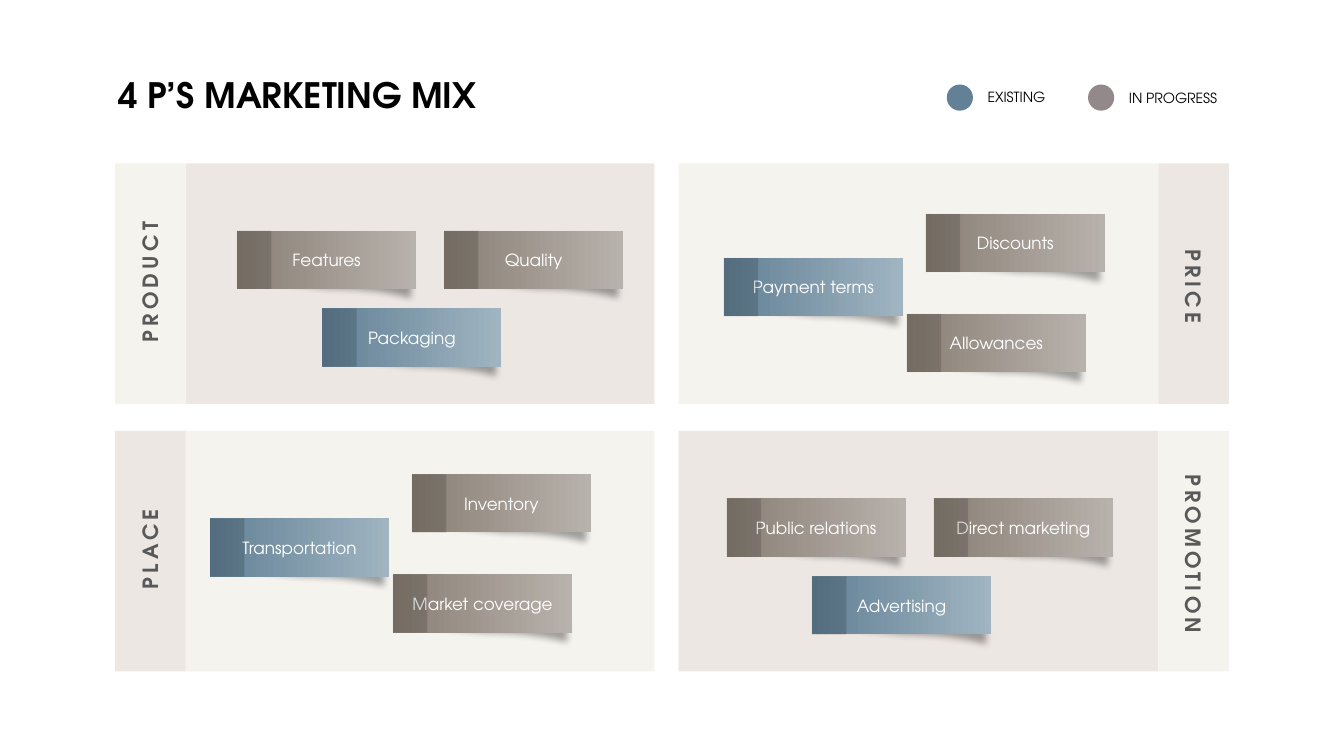
from lxml import etree
from pptx import Presentation
from pptx.dml.color import RGBColor
from pptx.enum.shapes import MSO_SHAPE
from pptx.enum.text import MSO_ANCHOR, MSO_AUTO_SIZE, PP_ALIGN
from pptx.oxml.ns import qn
from pptx.util import Cm, Pt

RECT, OVAL = MSO_SHAPE.RECTANGLE, MSO_SHAPE.OVAL
LEFT, CENTER = PP_ALIGN.LEFT, PP_ALIGN.CENTER
MIDDLE = MSO_ANCHOR.MIDDLE
GROW = MSO_AUTO_SIZE.SHAPE_TO_FIT_TEXT

FONT = "TeX Gyre Adventor"
THEME = {
    "rose": "ECE7E3", "ivory": "F4F3EE", "curl": "D0CECE", "shade": "000000",
    "existing": "628196", "in_progress": "93898A",
    "blue_card": ("628196", "A0B4C1"), "brown_card": ("897F75", "B8B2AC"),
    "title": ("000000", {"name": FONT, "size": Pt(25), "bold": True}),
    "tab": ("595959", {"name": FONT, "size": Pt(15), "bold": True}),
    "card": ("FFFFFF", {"name": FONT, "size": Pt(12), "bold": False}),
    "legend": ("000000", {"name": FONT, "size": Pt(10), "bold": False}),
}


def paint(s, color):
    """Fill a shape with a THEME colour or gradient, without line or shadow."""
    value = THEME[color]
    if isinstance(value, tuple):
        s.fill.gradient()
        s.fill.gradient_angle = 0
        for stop, rgb in zip(s.fill.gradient_stops, value):
            stop.color.rgb = RGBColor.from_string(rgb)
    else:
        s.fill.solid()
        s.fill.fore_color.rgb = RGBColor.from_string(value)
    s.line.fill.background()
    s.shadow.inherit = False
    return s


def write(s, text, style, align, **frame):
    """Put one styled line of text in a shape and return its run."""
    tf = s.text_frame
    for name, value in frame.items():
        setattr(tf, name, value)
    p = tf.paragraphs[0]
    p.alignment = align
    r = p.add_run()
    r.text = text
    rgb, font = THEME[style]
    for name, value in font.items():
        setattr(r.font, name, value)
    r.font.color.rgb = RGBColor.from_string(rgb)
    return r


prs = Presentation()
prs.slide_width, prs.slide_height = Cm(33.87), Cm(19.05)
slide = prs.slides.add_slide(prs.slide_layouts[5])
sp = slide.shapes

# Title
title = sp.title
title.left, title.top, title.width, title.height = map(Cm, (2.72, 1.73, 9.65, 1.32))
write(title, "4 P’S MARKETING MIX", "title", LEFT,
      word_wrap=False, vertical_anchor=MIDDLE)

# Panels
PANEL_H, TAB_W, LABEL_H = 6.06, 1.78, 0.89
TOPS = (4.12, 10.86)
# panel x, panel width, tab x, label turn, label shift down
SIDES = {"left": (4.68, 11.81, 2.9, 270, -0.04),
         "right": (17.1, 12.09, 29.19, 90, 0.07)}
# label, label width, side, row, panel colour, tab colour
PANELS = [
    ("PRODUCT", 3.68, "left", 0, "rose", "ivory"),
    ("PRICE", 2.51, "right", 0, "ivory", "rose"),
    ("PLACE", 2.67, "left", 1, "ivory", "rose"),
    ("PROMOTION", 4.67, "right", 1, "rose", "ivory"),
]
for label, label_w, side, row, panel_color, tab_color in PANELS:
    x, w = SIDES[side][:2]
    paint(sp.add_shape(RECT, Cm(x), Cm(TOPS[row]), Cm(w), Cm(PANEL_H)), panel_color)

# Outline of the curled edge below a card, from its top left corner:
# three straight points, then two curves of three points each
CURL = [(0.23, 0.99), (4.37, 0.99), (4.37, 1.45), (4.34, 1.45),
        (3.81, 1.3), (3.1, 1.22), (2.31, 1.22),
        (1.63, 1.14), (0.18, 1.02), (0.23, 0.99)]
CURVE_STARTS = (3, 6)

# Cards: each set starts at an anchor and follows one of two arrangements
CARD_W, CARD_H, STRIP_W = 4.52, 1.47, 0.87
PYRAMID = [(0, 0, "brown_card"), (5.22, 0, "brown_card"), (2.15, 1.96, "blue_card")]
ZIGZAG = [(0, 0, "blue_card"), (5.09, -1.11, "brown_card"), (4.61, 1.41, "brown_card")]
CARD_SETS = [
    (5.97, 5.81, PYRAMID, ("Features", "Quality", "Packaging")),
    (18.24, 6.5, ZIGZAG, ("Payment terms", "Discounts", "Allowances")),
    (5.29, 13.06, ZIGZAG, ("Transportation", "Inventory", "Market coverage")),
    (18.31, 12.56, PYRAMID, ("Public relations", "Direct marketing", "Advertising")),
]
for anchor_x, anchor_y, arrangement, names in CARD_SETS:
    for (dx, dy, color), name in zip(arrangement, names):
        x, y = anchor_x + dx, anchor_y + dy
        group = sp.add_group_shape().shapes

        # Curl: join each three points of a curve into one Bezier segment
        points = [(Cm(x + px), Cm(y + py)) for px, py in CURL]
        outline = group.build_freeform(*points[0])
        outline.add_line_segments(points[1:], close=True)
        s = paint(outline.convert_to_shape(), "curl")
        segments = list(s._element.spPr.iter(qn("a:lnTo")))
        for start in CURVE_STARTS:
            bezier = etree.Element(qn("a:cubicBezTo"))
            segments[start].addprevious(bezier)
            for segment in segments[start:start + 3]:
                bezier.append(segment[0])
                segment.getparent().remove(segment)

        # Soft shadow of the curl
        effects = s._element.spPr.find(qn("a:effectLst"))
        shadow = etree.SubElement(effects, qn("a:outerShdw"), blurRad=str(Pt(5)),
                                  dist=str(Pt(7)), dir="5400000", rotWithShape="0")
        rgb = etree.SubElement(shadow, qn("a:srgbClr"), val=THEME["shade"])
        etree.SubElement(rgb, qn("a:alpha"), val="34000")

        # Card face and dark strip, the strip lying on its side
        card = paint(group.add_shape(RECT, Cm(x), Cm(y), Cm(CARD_W), Cm(CARD_H)), color)
        write(card, name, "card", CENTER, vertical_anchor=MIDDLE)
        inset = (CARD_H - STRIP_W) / 2
        strip = paint(group.add_shape(RECT, Cm(x - inset), Cm(y + inset),
                                      Cm(CARD_H), Cm(STRIP_W)), "shade")
        strip.rotation = 270
        rgb = strip._element.spPr.find(".//" + qn("a:srgbClr"))
        etree.SubElement(rgb, qn("a:alpha"), val="15000")

# Side tabs
for label, label_w, side, row, panel_color, tab_color in PANELS:
    x, turn, shift = SIDES[side][2:]
    top = TOPS[row]
    group = sp.add_group_shape().shapes
    paint(group.add_shape(RECT, Cm(x), Cm(top), Cm(TAB_W), Cm(PANEL_H)), tab_color)
    tb = group.add_textbox(Cm(x + (TAB_W - label_w) / 2),
                           Cm(top + (PANEL_H - LABEL_H) / 2 + shift),
                           Cm(label_w), Cm(LABEL_H))
    tb.rotation = turn
    r = write(tb, label, "tab", CENTER, word_wrap=False, auto_size=GROW)
    r.font._element.set("spc", "300")

# Legend
DOT = 0.66
for x, text_y, w, text, color in ((23.86, 2.11, 1.98, "EXISTING", "existing"),
                                  (27.42, 2.13, 2.77, "IN PROGRESS", "in_progress")):
    paint(sp.add_shape(OVAL, Cm(x), Cm(2.13), Cm(DOT), Cm(DOT)), color)
    tb = sp.add_textbox(Cm(x + 0.78), Cm(text_y), Cm(w), Cm(0.69))
    write(tb, text, "legend", LEFT, word_wrap=False, auto_size=GROW)

prs.save("out.pptx")
